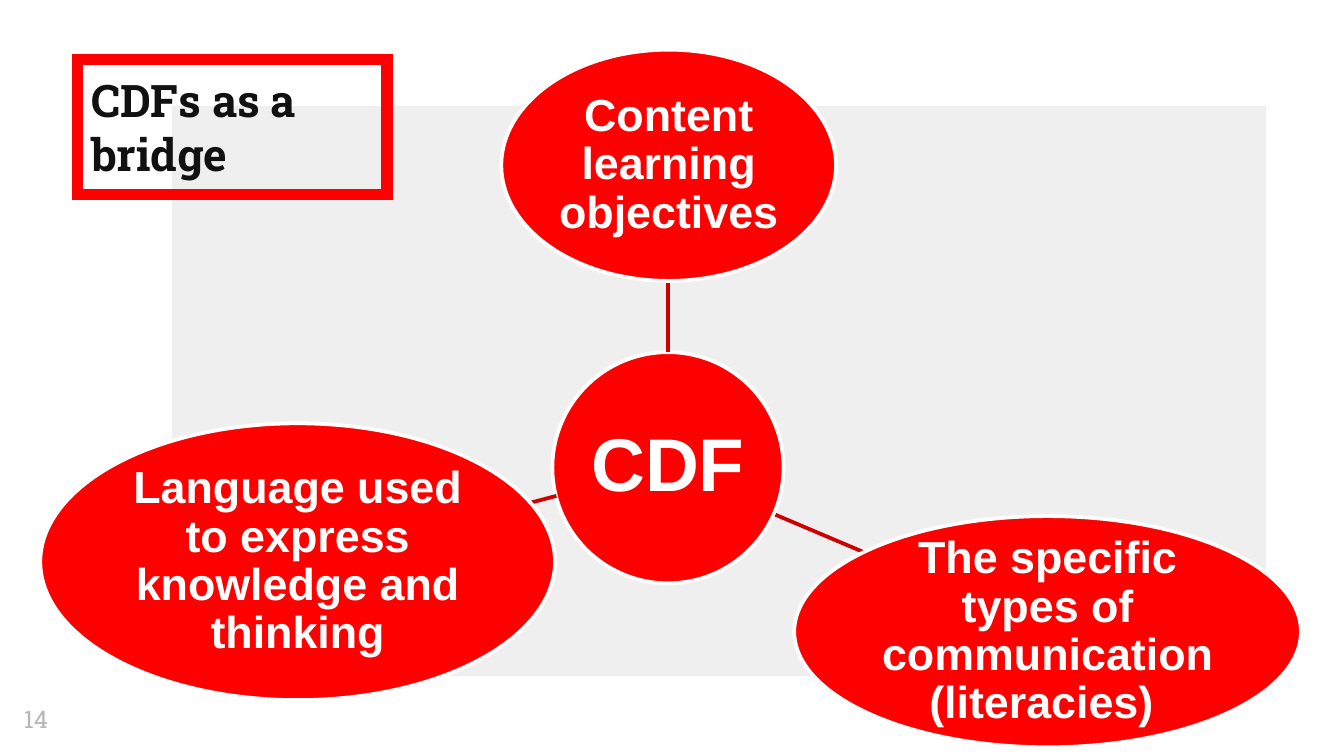
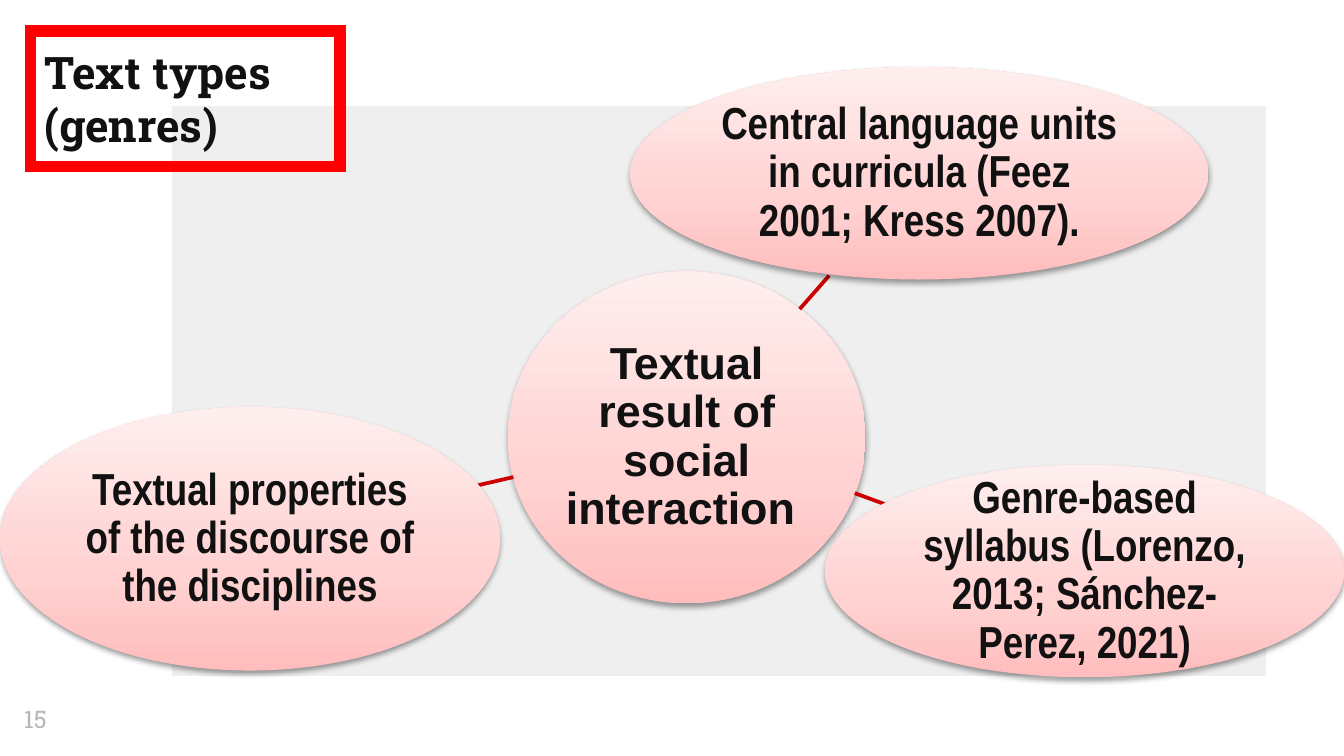
from copy import deepcopy
from dataclasses import dataclass

from lxml import etree
from pptx import Presentation, util as u
from pptx.dml.color import RGBColor
from pptx.enum import shapes, text
from pptx.oxml.ns import qn

PX = 9144  # EMU in one px, 100 px to the inch


@dataclass(frozen=True)
class Theme:
    panel: str = "EFEFEF"
    red: str = "FF0000"
    link: str = "CC0000"
    white: str = "FFFFFF"
    ink: str = "111111"
    muted: str = "B7B7B7"
    blush: tuple = ((0, "FFBDBD"), (0.35, "FFD1D1"), (1, "FFEEEE"))
    slab: str = "Roboto Slab"
    sans: str = "Arial"
    narrow: str = "Arial Narrow"
    body_size: int = 24
    hub_size: int = 40
    number_size: int = 13
    frame_width: int = 6
    line_width: int = 2


T = Theme()


def rgb(value):
    return RGBColor.from_string(value)


def box(*px):
    return [n * PX for n in px]


def write(sp, words, size, color, font, inset, bold=True):
    tf = sp.text_frame
    tf.word_wrap = True
    tf.margin_left = tf.margin_top = tf.margin_right = tf.margin_bottom = inset * PX
    p = tf.paragraphs[0]
    r = p.add_run()
    r.text = words
    r.font.size, r.font.bold, r.font.name = u.Pt(size), bold, font
    r.font.color.rgb = rgb(color)
    return tf, p


# Parts that both slides share
def add_base(prs, title, left, top, number):
    s = prs.slides.add_slide(prs.slide_layouts[6])
    s.background.fill.solid()
    s.background.fill.fore_color.rgb = rgb(T.white)

    panel = s.shapes.add_shape(shapes.MSO_SHAPE.RECTANGLE, *box(128, 79, 814, 424))
    panel.shadow.inherit = False
    panel.fill.solid()
    panel.fill.fore_color.rgb = rgb(T.panel)
    panel.line.fill.background()

    # Title frame with square corners
    frame = s.shapes.add_textbox(*box(left, top, 230, 101))
    frame.line.color.rgb = rgb(T.red)
    frame.line.width = u.Pt(T.frame_width)
    etree.SubElement(frame.element.spPr.find(qn("a:ln")), qn("a:miter"), lim="800000")
    write(frame, title, T.body_size, T.ink, T.slab, 10)

    corner = s.shapes.add_textbox(*box(8, 514, 60, 43))
    write(corner, number, T.number_size, T.muted, T.slab, 10, bold=False)
    return s


# Ellipse looks
def paint_solid(sp):
    sp.fill.solid()
    sp.fill.fore_color.rgb = rgb(T.red)
    sp.line.color.rgb = rgb(T.white)
    sp.line.width = u.Pt(T.line_width)


def paint_blush(sp):
    sp.fill.gradient()
    sp.fill.gradient_angle = 90
    spPr = sp.element.spPr
    stops = spPr.find(".//" + qn("a:gsLst"))
    stops.append(deepcopy(stops[0]))
    for stop, (position, color) in zip(sp.fill.gradient_stops, T.blush):
        stop.position = position
        stop.color.rgb = rgb(color)
    sp.line.fill.background()
    # Soft shadow straight below
    shadow = etree.SubElement(spPr.find(qn("a:effectLst")), qn("a:outerShdw"),
                              blurRad="40000", dist="20000", dir="5400000",
                              rotWithShape="0")
    black = etree.SubElement(shadow, qn("a:srgbClr"), val="000000")
    etree.SubElement(black, qn("a:alpha"), val="38000")


def add_bubble(s, at, words, paint, color, font, size=T.body_size):
    sp = s.shapes.add_shape(shapes.MSO_SHAPE.OVAL, *box(*at))
    sp.shadow.inherit = False
    paint(sp)
    tf, p = write(sp, words, size, color, font, 2)
    tf.vertical_anchor = text.MSO_ANCHOR.MIDDLE
    p.alignment = text.PP_ALIGN.CENTER
    p.line_spacing = 0.9


def add_link(s, ends):
    c = s.shapes.add_connector(shapes.MSO_CONNECTOR.STRAIGHT, *box(*ends))
    c.line.color.rgb = rgb(T.link)
    c.line.width = u.Pt(T.line_width)
    etree.SubElement(c.element.spPr, qn("a:effectLst"))


def add_spokes(s, spokes, paint, color, font):
    for ends, at, words in spokes:
        add_link(s, ends)
        add_bubble(s, at, words, paint, color, font)


def main():
    prs = Presentation()
    prs.slide_width = 1000 * PX
    prs.slide_height = prs.slide_width * 9 // 16

    # CDFs as a bridge
    s = add_base(prs, "CDFs as a bridge", 58, 44, "14")
    add_bubble(s, (411, 262, 172, 172), "CDF", paint_solid, T.white, T.sans, T.hub_size)
    add_spokes(s, [
        ((497, 262, 497, 210), (373, 37, 249, 172),
         "Content learning objectives "),
        ((577, 383, 643, 411), (591, 384, 377, 172),
         "The specific types of communication (literacies) "),
        ((414, 369, 395, 374), (30, 315, 383, 206),
         "Language used to express knowledge and thinking"),
    ], paint_solid, T.white, T.sans)

    # Text types
    s = add_base(prs, "Text types (genres)", 23, 23, "15")
    add_bubble(s, (378, 202, 266, 247), "Textual result of social interaction ",
               paint_blush, T.ink, T.sans)
    add_spokes(s, [
        ((595, 230, 617, 205), (469, 50, 430, 158),
         "Central language units in curricula (Feez 2001; Kress 2007)."),
        ((636, 367, 658, 375), (614, 346, 386, 158),
         "Genre-based syllabus (Lorenzo, 2013; Sánchez-Perez, 2021)"),
        ((382, 355, 356, 361), (0, 303, 372, 196),
         "Textual properties of the discourse of the disciplines"),
    ], paint_blush, T.ink, T.narrow)

    prs.save("out.pptx")


if __name__ == "__main__":
    main()
